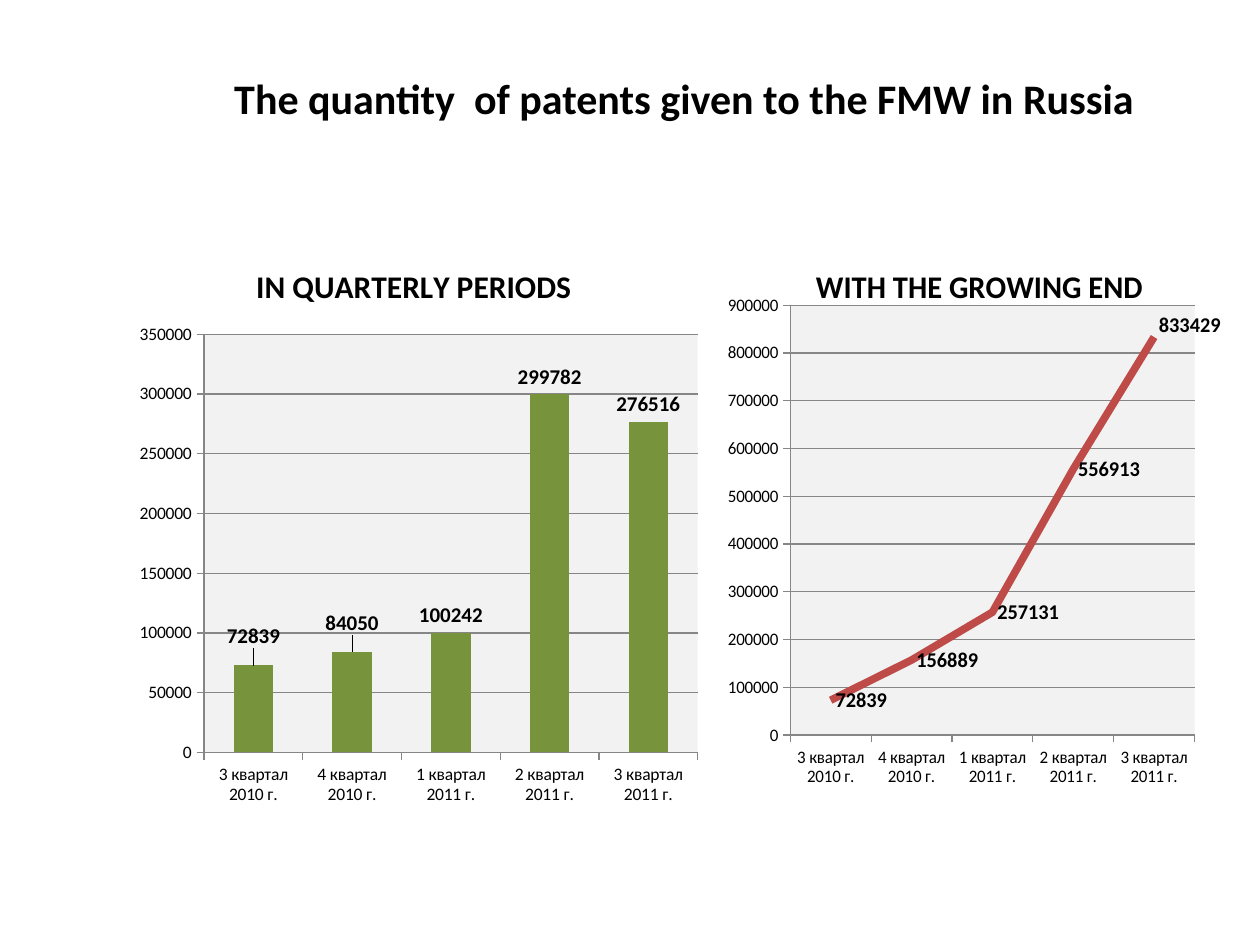
from lxml.etree import SubElement
from pptx import Presentation
from pptx.chart.data import CategoryChartData
from pptx.dml.color import RGBColor
from pptx.enum.chart import XL_CHART_TYPE, XL_LABEL_POSITION, XL_MARKER_STYLE, XL_TICK_MARK
from pptx.enum.text import MSO_ANCHOR, PP_ALIGN
from pptx.oxml import parse_xml
from pptx.oxml.ns import qn
from pptx.util import Inches, Pt

# Content
FONT = "Calibri"
TITLE = "The quantity  of patents given to the FMW in Russia"
QUARTERS = ["3 квартал 2010 г.", "4 квартал 2010 г.", "1 квартал 2011 г.",
            "2 квартал 2011 г.", "3 квартал 2011 г."]
CHARTS = [
    {"title": "IN QUARTERLY PERIODS", "type": XL_CHART_TYPE.COLUMN_CLUSTERED,
     "box": (1.02, 1.87, 4.61, 4.61), "values": [72839, 84050, 100242, 299782, 276516],
     "color": "77933C", "label_position": XL_LABEL_POSITION.OUTSIDE_END,
     "label_shifts": {0: -0.02, 1: -0.02}, "axis": (350000, 50000),
     "title_place": (0.21, 0.04), "plot_place": (0.13, 0.17, 0.85, 0.72)},
    {"title": "WITH THE GROWING END", "type": XL_CHART_TYPE.LINE,
     "box": (5.55, 1.87, 4.14, 4.61), "values": [72839, 156889, 257131, 556913, 833429],
     "color": "BE4B48", "label_position": XL_LABEL_POSITION.RIGHT,
     "label_shifts": {4: -0.02}, "axis": (900000, 100000),
     "title_place": (0.22, 0.04), "plot_place": (0.18, 0.12, 0.8, 0.74)},
]


def color(hex_text):
    return RGBColor.from_string(hex_text)


def style_font(font, size, bold=False):
    font.name, font.size, font.bold = FONT, Pt(size), bold
    font.color.rgb = color("000000")


def make_layout(place, inner=False, edge=True):
    """Build a manual layout from fractions x, y and optionally w, h."""
    layout = parse_xml('<c:layout xmlns:c="http://schemas.openxmlformats.org/'
                       'drawingml/2006/chart"><c:manualLayout/></c:layout>')
    settings = [("layoutTarget", "inner")] if inner else []
    if edge:
        settings += [("xMode", "edge"), ("yMode", "edge")]
    settings += zip("xywh", place)
    for tag, value in settings:
        SubElement(layout[0], qn("c:" + tag)).set("val", str(value))
    return layout


def set_layout(parent, layout, before):
    for old in parent.findall(qn("c:layout")):
        parent.remove(old)
    parent.insert(before, layout)


def style_axes(chart, maximum, step):
    for axis in (chart.category_axis, chart.value_axis):
        axis.major_tick_mark = XL_TICK_MARK.OUTSIDE
        axis.minor_tick_mark = XL_TICK_MARK.NONE
        axis.format.line.color.rgb = color("868686")
        style_font(axis.tick_labels.font, 10)
    value_axis = chart.value_axis
    value_axis.minimum_scale, value_axis.maximum_scale = 0, maximum
    value_axis.major_unit = step
    value_axis.has_major_gridlines = True
    value_axis.major_gridlines.format.line.color.rgb = color("868686")


def style_labels(series, position, shifts):
    labels = series.data_labels
    labels.show_value, labels.position = True, position
    style_font(labels.font, 12, True)
    for index, shift in shifts.items():
        label = series.points[index].data_label
        label.position = position
        style_font(label.font, 12, True)
    for label_element in labels._element.findall(qn("c:dLbl")):
        index = int(label_element[0].get("val"))
        set_layout(label_element, make_layout((0, shifts[index]), edge=False), 1)


def add_patent_chart(slide, details):
    data = CategoryChartData()
    data.categories = QUARTERS
    data.add_series("Series 1", details["values"])
    box = [Inches(length) for length in details["box"]]
    chart = slide.shapes.add_chart(details["type"], *box, data).chart
    style_font(chart.font, 10)
    chart.has_legend = False

    # Chart title
    chart.has_title = True
    run = chart.chart_title.text_frame.paragraphs[0].add_run()
    run.text = details["title"]
    style_font(run.font, 18, True)
    set_layout(chart.chart_title._element, make_layout(details["title_place"]), 1)

    # Plot area
    plot_area = chart._chartSpace.chart.plotArea
    set_layout(plot_area, make_layout(details["plot_place"], inner=True), 0)
    plot_area.append(parse_xml(
        '<c:spPr xmlns:c="http://schemas.openxmlformats.org/drawingml/2006/chart" '
        'xmlns:a="http://schemas.openxmlformats.org/drawingml/2006/main">'
        '<a:solidFill><a:srgbClr val="F2F2F2"/></a:solidFill></c:spPr>'))
    style_axes(chart, *details["axis"])

    # Series
    plot = chart.plots[0]
    plot.vary_by_categories = False
    series = plot.series[0]
    if details["type"] == XL_CHART_TYPE.LINE:
        series.smooth = False
        series.marker.style = XL_MARKER_STYLE.NONE
        series.format.line.width = Pt(4.5)
        series.format.line.color.rgb = color(details["color"])
    else:
        plot.gap_width = 150
        series.format.fill.solid()
        series.format.fill.fore_color.rgb = color(details["color"])
    style_labels(series, details["label_position"], details["label_shifts"])


def main():
    presentation = Presentation()
    presentation.slide_width, presentation.slide_height = Inches(10), Inches(7.5)
    slide = presentation.slides.add_slide(presentation.slide_layouts[5])

    # Slide title
    title = slide.shapes.title
    title.left, title.top = Inches(1.09), Inches(0.3)
    title.width, title.height = Inches(8.68), Inches(0.95)
    title.text_frame.vertical_anchor = MSO_ANCHOR.MIDDLE
    paragraph = title.text_frame.paragraphs[0]
    paragraph.alignment = PP_ALIGN.CENTER
    run = paragraph.add_run()
    run.text = TITLE
    style_font(run.font, 24, True)

    # Charts
    for details in CHARTS:
        add_patent_chart(slide, details)
    presentation.save("out.pptx")


if __name__ == "__main__":
    main()
